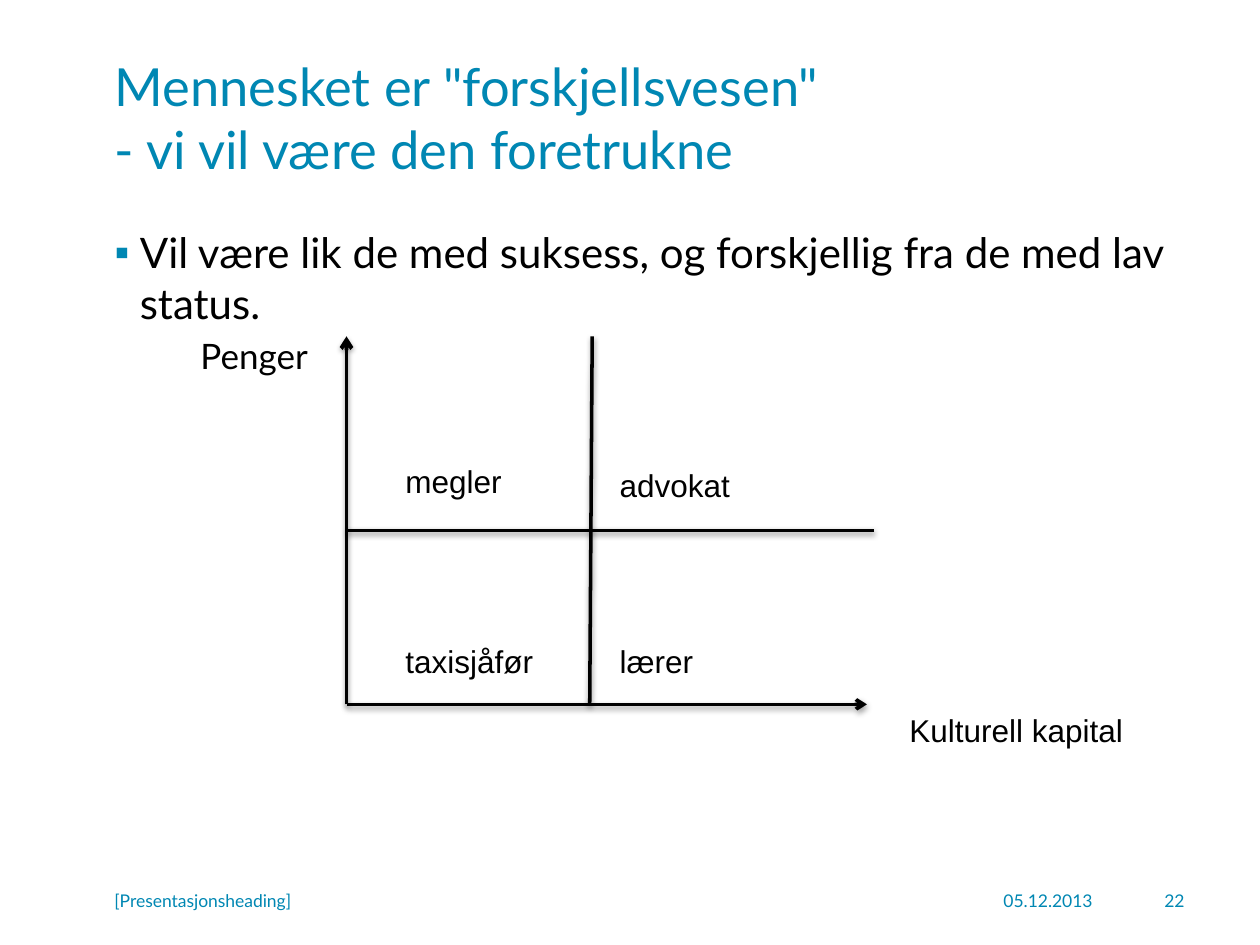
from typing import NamedTuple

from lxml.etree import SubElement
from pptx import Presentation
from pptx.dml.color import RGBColor
from pptx.enum.shapes import MSO_CONNECTOR
from pptx.enum.text import MSO_ANCHOR, MSO_AUTO_SIZE, PP_ALIGN
from pptx.oxml.ns import qn
from pptx.util import Pt

BLUE, BLACK = "0087B3", "000000"
LEFT, WIDE = 58.3, 625.7
BASE, TOP, AXIS = 402.5, 192.2, 198


class Line(NamedTuple):
    x: float
    y: float
    to_x: float
    to_y: float
    width: float = 2
    arrow: bool = False


class Label(NamedTuple):
    text: str
    x: float
    y: float
    w: float
    h: float = 28.8


class Foot(NamedTuple):
    text: str
    x: float
    w: float
    align: PP_ALIGN = PP_ALIGN.RIGHT


LINES = [
    Line(AXIS, BASE, AXIS, TOP, 2.25, True),
    Line(AXIS, BASE, 495.4, BASE, arrow=True),
    Line(338.4, TOP, 337, BASE),
    Line(AXIS, 303.1, 499.7, 303.1),
]
LABELS = [
    Label("Kulturell kapital", 512.6, BASE, 137.5),
    Label("advokat", 347, 262.8, 78.5),
    Label("lærer", 347, 363.6, 56.9),
    Label("megler", 224.6, 260.6, 69.8),
    Label("taxisjåfør", 224.6, 363.6, 88.6),
]
FEET = [
    Foot("05.12.2013", 529.2, 102.2),
    Foot("[Presentasjonsheading]", LEFT, 332.6, PP_ALIGN.LEFT),
    Foot("22", 635.8, 48.2),
]


def ink(code: str) -> RGBColor:
    """Turn a hex string into a colour."""
    return RGBColor.from_string(code)


def write(para, text: str, size: float, color: str, face: str = "Lato") -> None:
    """Add one formatted run to a paragraph."""
    run = para.add_run()
    run.text = text
    run.font.size = Pt(size)
    run.font.name = face
    run.font.color.rgb = ink(color)


def place(shape, x: float, y: float, w: float, h: float) -> None:
    """Move and size a shape."""
    shape.left, shape.top, shape.width, shape.height = map(Pt, (x, y, w, h))


def indent(para, left: float, first: float, mark: str = "") -> None:
    """Set the indents and the bullet of a paragraph."""
    prop = para._p.get_or_add_pPr()
    prop.set("marL", str(Pt(left)))
    prop.set("indent", str(Pt(first)))
    if mark:
        tint = SubElement(prop, qn("a:buClr"))
        SubElement(tint, qn("a:srgbClr"), val=BLUE)
        SubElement(prop, qn("a:buFont"), typeface="Arial")
        SubElement(prop, qn("a:buChar"), char=mark)
    else:
        SubElement(prop, qn("a:buNone"))


def draw_line(slide, item: Line) -> None:
    """Draw a line with a soft shadow and, if asked, an arrowhead."""
    ends = map(Pt, (item.x, item.y, item.to_x, item.to_y))
    link = slide.shapes.add_connector(MSO_CONNECTOR.STRAIGHT, *ends)
    link.line.color.rgb = ink(BLACK)
    link.line.width = Pt(item.width)
    if item.arrow:
        SubElement(link.line._get_or_add_ln(), qn("a:tailEnd"), type="arrow")
    list_ = SubElement(link._element.spPr, qn("a:effectLst"))
    shade = SubElement(list_, qn("a:outerShdw"), blurRad=str(Pt(3.1)),
                       dist=str(Pt(1.6)), dir="5400000", rotWithShape="0")
    tint = SubElement(shade, qn("a:srgbClr"), val=BLACK)
    SubElement(tint, qn("a:alpha"), val="38000")


def draw_label(slide, item: Label) -> None:
    """Draw a label in the chart area."""
    box = slide.shapes.add_textbox(*map(Pt, item[1:]))
    box.text_frame.word_wrap = False
    box.text_frame.auto_size = MSO_AUTO_SIZE.SHAPE_TO_FIT_TEXT
    write(box.text_frame.paragraphs[0], item.text, 18, BLACK, "Arial")


def draw_foot(slide, item: Foot) -> None:
    """Draw one part of the footer."""
    box = slide.shapes.add_textbox(Pt(item.x), Pt(500.4), Pt(item.w), Pt(28.8))
    box.text_frame.word_wrap = True
    box.text_frame.vertical_anchor = MSO_ANCHOR.MIDDLE
    para = box.text_frame.paragraphs[0]
    para.alignment = item.align
    write(para, item.text, 10, BLUE)


def fill_title(shape) -> None:
    """Write the two-line title."""
    place(shape, LEFT, 21.6, WIDE, 90)
    frame = shape.text_frame
    frame.auto_size = MSO_AUTO_SIZE.NONE
    frame.vertical_anchor = MSO_ANCHOR.MIDDLE
    para = frame.paragraphs[0]
    para.alignment = PP_ALIGN.LEFT
    write(para, 'Mennesket er "forskjellsvesen"', 30, BLUE)
    para.add_line_break()
    write(para, "- vi vil være den foretrukne", 30, BLUE)


def fill_body(shape) -> None:
    """Write the bullet and the name of the upright axis."""
    place(shape, LEFT, 126, WIDE, 356.4)
    frame = shape.text_frame
    frame.auto_size = MSO_AUTO_SIZE.NONE
    point = frame.paragraphs[0]
    indent(point, 14.4, -14.4, "▪")
    point.space_before = Pt(0)
    write(point, "Vil være lik de med suksess, og forskjellig fra de med lav status.",
          24, BLACK)
    name = frame.add_paragraph()
    name.level = 1
    indent(name, 49, 0)
    name.space_before = Pt(4)
    write(name, "Penger", 20, BLACK)


def main() -> None:
    """Build and save the slide."""
    deck = Presentation()
    deck.slide_width, deck.slide_height = Pt(720), Pt(540)
    slide = deck.slides.add_slide(deck.slide_layouts[1])
    fill_title(slide.shapes.title)
    fill_body(slide.placeholders[1])
    for draw, items in ((draw_foot, FEET), (draw_line, LINES), (draw_label, LABELS)):
        for item in items:
            draw(slide, item)
    deck.save("out.pptx")


if __name__ == "__main__":
    main()
